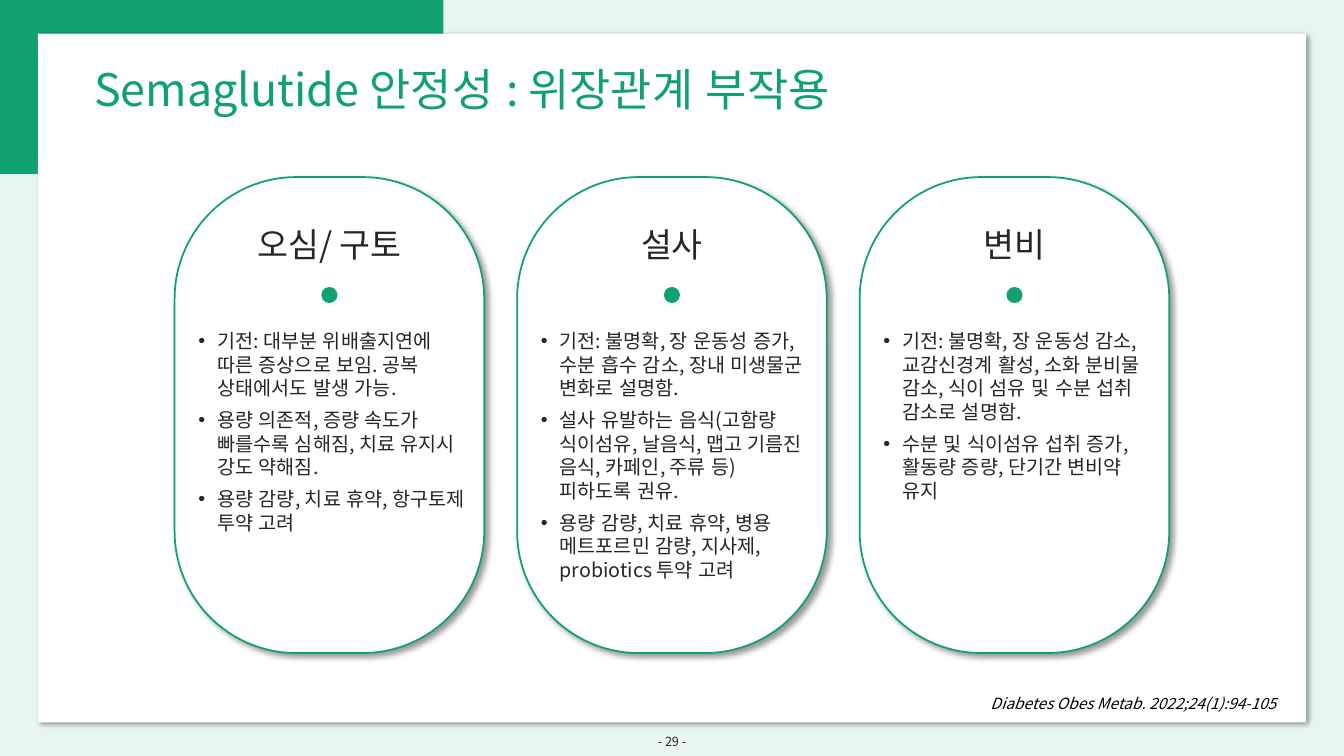
from lxml import etree
from pptx import Presentation
from pptx.dml.color import RGBColor
from pptx.enum.lang import MSO_LANGUAGE_ID
from pptx.enum.shapes import MSO_SHAPE
from pptx.enum.text import MSO_ANCHOR, MSO_AUTO_SIZE, PP_ALIGN
from pptx.oxml.ns import qn
from pptx.util import Pt

RECT, ROUNDED, OVAL = MSO_SHAPE.RECTANGLE, MSO_SHAPE.ROUNDED_RECTANGLE, MSO_SHAPE.OVAL
TOP, MIDDLE = MSO_ANCHOR.TOP, MSO_ANCHOR.MIDDLE
LEFT, CENTER, RIGHT = PP_ALIGN.LEFT, PP_ALIGN.CENTER, PP_ALIGN.RIGHT
NO_AUTOFIT = MSO_AUTO_SIZE.NONE
KOREAN = MSO_LANGUAGE_ID.KOREAN

FONT = "Noto Sans CJK KR"
COLORS = {"green": "0FA170", "mint": "E7F6F1", "white": "FFFFFF",
          "ink": "262626", "black": "000000"}

CARDS = [
    ("오심/ 구토", [
        "기전: 대부분 위배출지연에 따른 증상으로 보임. 공복 상태에서도 발생 가능.",
        "용량 의존적, 증량 속도가 빠를수록 심해짐, 치료 유지시 강도 약해짐.",
        "용량 감량, 치료 휴약, 항구토제 투약 고려"]),
    ("설사", [
        "기전: 불명확, 장 운동성 증가, 수분 흡수 감소, 장내 미생물군 변화로 설명함.",
        "설사 유발하는 음식(고함량 식이섬유, 날음식, 맵고 기름진 음식, 카페인, 주류 등) "
        "피하도록 권유.",
        "용량 감량, 치료 휴약, 병용 메트포르민 감량, 지사제, probiotics 투약 고려"]),
    ("변비", [
        "기전: 불명확, 장 운동성 감소, 교감신경계 활성, 소화 분비물 감소, 식이 섬유 및 "
        "수분 섭취 감소로 설명함.",
        "수분 및 식이섬유 섭취 증가, 활동량 증량, 단기간 변비약 유지"]),
]


def rgb(name):
    """Return the named colour."""
    return RGBColor.from_string(COLORS[name])


def place(sp, x, y, w, h):
    """Move a shape to a box given in points."""
    sp.left, sp.top, sp.width, sp.height = Pt(x), Pt(y), Pt(w), Pt(h)


def add_shadow(sp):
    """Give a shape a soft shadow to the lower right."""
    effects = sp._element.spPr.find(qn("a:effectLst"))
    shadow = etree.SubElement(effects, qn("a:outerShdw"), blurRad=str(Pt(4)),
                              dist=str(Pt(3)), dir="2700000", algn="tl", rotWithShape="0")
    color = etree.SubElement(shadow, qn("a:srgbClr"), val=COLORS["black"])
    etree.SubElement(color, qn("a:alpha"), val="40000")


def add_block(slide, kind, box, fill, line=None, shadow=False):
    """Add a filled preset shape."""
    sp = slide.shapes.add_shape(kind, *map(Pt, box))
    sp.shadow.inherit = False
    sp.fill.solid()
    sp.fill.fore_color.rgb = rgb(fill)
    if line:
        sp.line.color.rgb = rgb(line)
        sp.line.width = Pt(1.25)
    else:
        sp.line.fill.background()
    if shadow:
        add_shadow(sp)
    return sp


def add_bullet(p):
    """Give a paragraph a hanging round bullet."""
    pPr = p._p.get_or_add_pPr()
    pPr.set("marL", str(Pt(13.5)))
    pPr.set("indent", str(-Pt(13.5)))
    etree.SubElement(pPr, qn("a:buFont"), typeface="Arial")
    etree.SubElement(pPr, qn("a:buChar"), char="•")
    p.space_after = Pt(6)


def write(sp, texts, size, color, align=LEFT, anchor=TOP, bullets=False, italic=False):
    """Fill a shape with one paragraph per text."""
    tf = sp.text_frame
    tf.word_wrap = True
    tf.auto_size = NO_AUTOFIT
    tf.vertical_anchor = anchor
    for i, text in enumerate(texts):
        p = tf.add_paragraph() if i else tf.paragraphs[0]
        if bullets:
            add_bullet(p)
        p.alignment = align
        p.space_before = Pt(0)
        p.line_spacing = Pt(round(size * 1.2, 1))
        r = p.add_run()
        r.text = text
        font = r.font
        font.size, font.bold, font.italic = Pt(size), False, italic
        font.name, font.language_id = FONT, KOREAN
        font.color.rgb = rgb(color)
        etree.SubElement(r._r.get_or_add_rPr(), qn("a:ea"), typeface=FONT)


def add_label(slide, box, text, size, color, **style):
    """Add a text box with one line."""
    sp = slide.shapes.add_textbox(*map(Pt, box))
    write(sp, [text], size, color, **style)


def add_frame(slide, w, h):
    """Draw the background, corner block, white panel and page number."""
    slide.background.fill.solid()
    slide.background.fill.fore_color.rgb = rgb("mint")
    add_block(slide, RECT, (0, 0, w * 0.33, h * 0.23), "green")
    add_block(slide, RECT, (27, 24, w - 54, h - 48), "white", shadow=True)
    add_label(slide, (w / 2 - 88, h - 25, 176, 29), "- 29 -", 9, "ink",
              align=CENTER, anchor=MIDDLE)


def add_title(slide, x, y, w, h):
    """Place the slide title."""
    sp = slide.shapes.title
    place(sp, x, y, w, h)
    write(sp, ["Semaglutide 안정성 : 위장관계 부작용"], 32, "green")
    slide.shapes._spTree.append(sp._element)


def add_card(slide, body, heading, points, x, y, w, h):
    """Draw one side-effect card with its heading, dot and list."""
    card = add_block(slide, ROUNDED, (x, y, w, h), "white", line="green", shadow=True)
    card.adjustments[0] = 0.393
    add_label(slide, (x, y + 30, w, 36), heading, 24, "ink", align=CENTER)
    dot = 11.5
    add_block(slide, OVAL, (x + (w - dot) / 2, y + 78.5, dot, dot), "green")
    place(body, x + 9.75, y + 105, 206.5, 190)
    write(body, points, 14, "ink", bullets=True)
    slide.shapes._spTree.append(body._element)


def add_cards(slide, x, y, w, h, gap):
    """Lay out the cards in a row of equal columns."""
    spare, *bodies = [ph for ph in slide.placeholders if ph.placeholder_format.idx]
    spare._element.getparent().remove(spare._element)
    card_w = (w - gap * (len(CARDS) - 1)) / len(CARDS)
    for i, (body, (heading, points)) in enumerate(zip(bodies, CARDS)):
        add_card(slide, body, heading, points, x + i * (card_w + gap), y, card_w, h)


def main():
    """Build and save the slide."""
    prs = Presentation()
    w, h = 960, 540
    prs.slide_width, prs.slide_height = Pt(w), Pt(h)
    slide = prs.slides.add_slide(prs.slide_layouts.get_by_name("Comparison"))
    add_frame(slide, w, h)
    add_title(slide, 60, 40.5, 849, 46)
    add_cards(slide, 124.75, 126.5, 710.5, 340, 23.5)
    add_label(slide, (439, 492.5, 480, 21), "Diabetes Obes Metab. 2022;24(1):94-105",
              11, "black", align=RIGHT, italic=True)
    prs.save("out.pptx")


if __name__ == "__main__":
    main()
